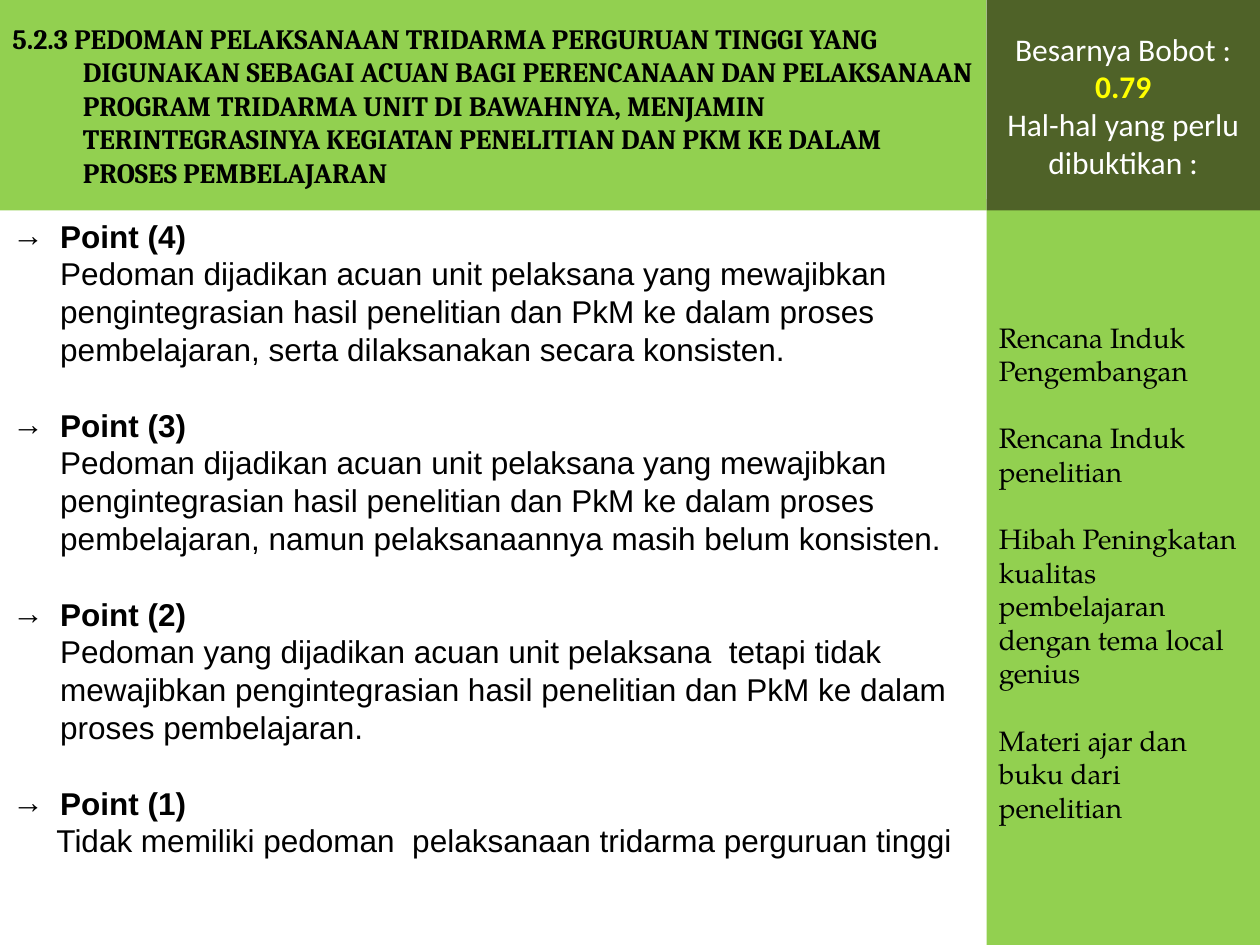
from dataclasses import dataclass

from lxml import etree
from pptx import Presentation
from pptx.dml.color import RGBColor
from pptx.enum.shapes import MSO_SHAPE
from pptx.enum.text import MSO_ANCHOR, PP_ALIGN
from pptx.oxml.ns import qn
from pptx.util import Inches, Pt

RECTANGLE = MSO_SHAPE.RECTANGLE
TOP, MIDDLE = MSO_ANCHOR.TOP, MSO_ANCHOR.MIDDLE
LEFT, CENTER = PP_ALIGN.LEFT, PP_ALIGN.CENTER


@dataclass(frozen=True)
class Theme:
    """Colours, fonts and type sizes of the slide."""
    green: str = "92D050"
    olive: str = "4F6228"
    black: str = "000000"
    white: str = "FFFFFF"
    yellow: str = "FFFF00"
    title_font: str = "Cambria"
    body_font: str = "Arial"
    weight_font: str = "Calibri"
    evidence_font: str = "TeX Gyre Pagella"
    small: float = 16
    large: float = 18
    small_line: float = 19.2
    large_line: float = 21.6


@dataclass(frozen=True)
class Line:
    """One paragraph and its format."""
    text: str
    font: str
    size: float
    color: str = "000000"
    bold: bool = False
    align: PP_ALIGN = LEFT
    margin: float = 0
    indent: float = 0
    bullet: str = ""
    before: float = 0
    pitch: float = 0


@dataclass(frozen=True)
class Level:
    """One score level of the rubric."""
    score: int
    text: str
    margin: float = 0.38


THEME = Theme()
SPLIT, HEADER, WIDTH, HEIGHT = 7.83, 1.67, 10, 7.5
HANG = 0.38

TITLE = ("5.2.3 PEDOMAN PELAKSANAAN TRIDARMA PERGURUAN TINGGI YANG DIGUNAKAN SEBAGAI ACUAN "
         "BAGI PERENCANAAN DAN PELAKSANAAN PROGRAM TRIDARMA UNIT DI BAWAHNYA, MENJAMIN "
         "TERINTEGRASINYA KEGIATAN PENELITIAN DAN PKM KE DALAM PROSES PEMBELAJARAN")
SHARED = ("Pedoman dijadikan acuan unit pelaksana yang mewajibkan pengintegrasian hasil "
          "penelitian dan PkM ke dalam proses pembelajaran, ")
LEVELS = [
    Level(4, SHARED + "serta dilaksanakan secara konsisten."),
    Level(3, SHARED + "namun pelaksanaannya masih belum konsisten."),
    Level(2, "Pedoman yang dijadikan acuan unit pelaksana  tetapi tidak mewajibkan "
             "pengintegrasian hasil penelitian dan PkM ke dalam proses pembelajaran."),
    Level(1, "Tidak memiliki pedoman  pelaksanaan tridarma perguruan tinggi", 0.35),
]
EVIDENCE = [
    "Rencana Induk Pengembangan",
    "Rencana Induk penelitian",
    "Hibah Peningkatan kualitas pembelajaran dengan tema local genius",
    "Materi ajar dan buku dari penelitian",
]


def write_lines(frame, lines: list[Line], anchor: MSO_ANCHOR) -> None:
    """Fill a text frame with formatted paragraphs."""
    frame.word_wrap = True
    frame.vertical_anchor = anchor
    frame.text = "\n".join(line.text for line in lines)
    for para, line in zip(frame.paragraphs, lines):
        para.alignment = line.align
        para.space_before = Pt(line.before)
        if line.pitch:
            para.line_spacing = Pt(line.pitch)
        properties = para._p.get_or_add_pPr()
        properties.set("marL", str(Inches(line.margin)))
        properties.set("indent", str(Inches(line.indent)))
        if line.bullet:
            etree.SubElement(properties, qn("a:buFont"), typeface=line.font)
            etree.SubElement(properties, qn("a:buChar"), char=line.bullet)
        for span in para.runs:
            span.font.name = line.font
            span.font.size = Pt(line.size)
            span.font.bold = line.bold
            span.font.color.rgb = RGBColor.from_string(line.color)


def add_panel(page, left: float, top: float, width: float, height: float,
              color: str, lines: list[Line]) -> None:
    """Draw a filled rectangle with vertically centred text."""
    panel = page.shapes.add_shape(RECTANGLE, Inches(left), Inches(top),
                                  Inches(width), Inches(height))
    panel.shadow.inherit = False
    panel.fill.solid()
    panel.fill.fore_color.rgb = RGBColor.from_string(color)
    panel.line.fill.background()
    write_lines(panel.text_frame, lines, MIDDLE)


def rubric_lines() -> list[Line]:
    """Return a bulleted heading and a description for each level."""
    lines = []
    for level in LEVELS:
        gap = THEME.large_line if lines else 0
        lines.append(Line(f"Point ({level.score})", THEME.body_font, THEME.large, bold=True,
                          margin=HANG, indent=-HANG, bullet="→", before=gap,
                          pitch=THEME.large_line))
        lines.append(Line(level.text, THEME.body_font, THEME.large, margin=level.margin,
                          pitch=THEME.large_line))
    return lines


def weight_line(text: str, color: str = THEME.white, bold: bool = False) -> Line:
    """Return a centred line of the weight panel."""
    return Line(text, THEME.weight_font, THEME.large, color, bold, CENTER)


def main() -> None:
    """Build the slide and save it."""
    deck = Presentation()
    deck.slide_width, deck.slide_height = Inches(WIDTH), Inches(HEIGHT)
    page = deck.slides.add_slide(deck.slide_layouts[6])

    rubric = page.shapes.add_textbox(Inches(0), Inches(HEADER), Inches(SPLIT),
                                     Inches(HEIGHT - HEADER))
    write_lines(rubric.text_frame, rubric_lines(), TOP)

    add_panel(page, 0, 0, SPLIT, HEADER, THEME.green, [
        Line(TITLE, THEME.title_font, THEME.small, bold=True, margin=0.56, indent=-0.56)])
    add_panel(page, SPLIT, 1.58, WIDTH - SPLIT, HEIGHT - 1.58, THEME.green, [
        Line(text, THEME.evidence_font, THEME.small, before=THEME.small_line if index else 0)
        for index, text in enumerate(EVIDENCE)])
    add_panel(page, SPLIT, 0, WIDTH - SPLIT, HEADER, THEME.olive, [
        weight_line("Besarnya Bobot :"),
        weight_line("0.79", THEME.yellow, True),
        weight_line("Hal-hal yang perlu dibuktikan :")])

    deck.save("out.pptx")


if __name__ == "__main__":
    main()
